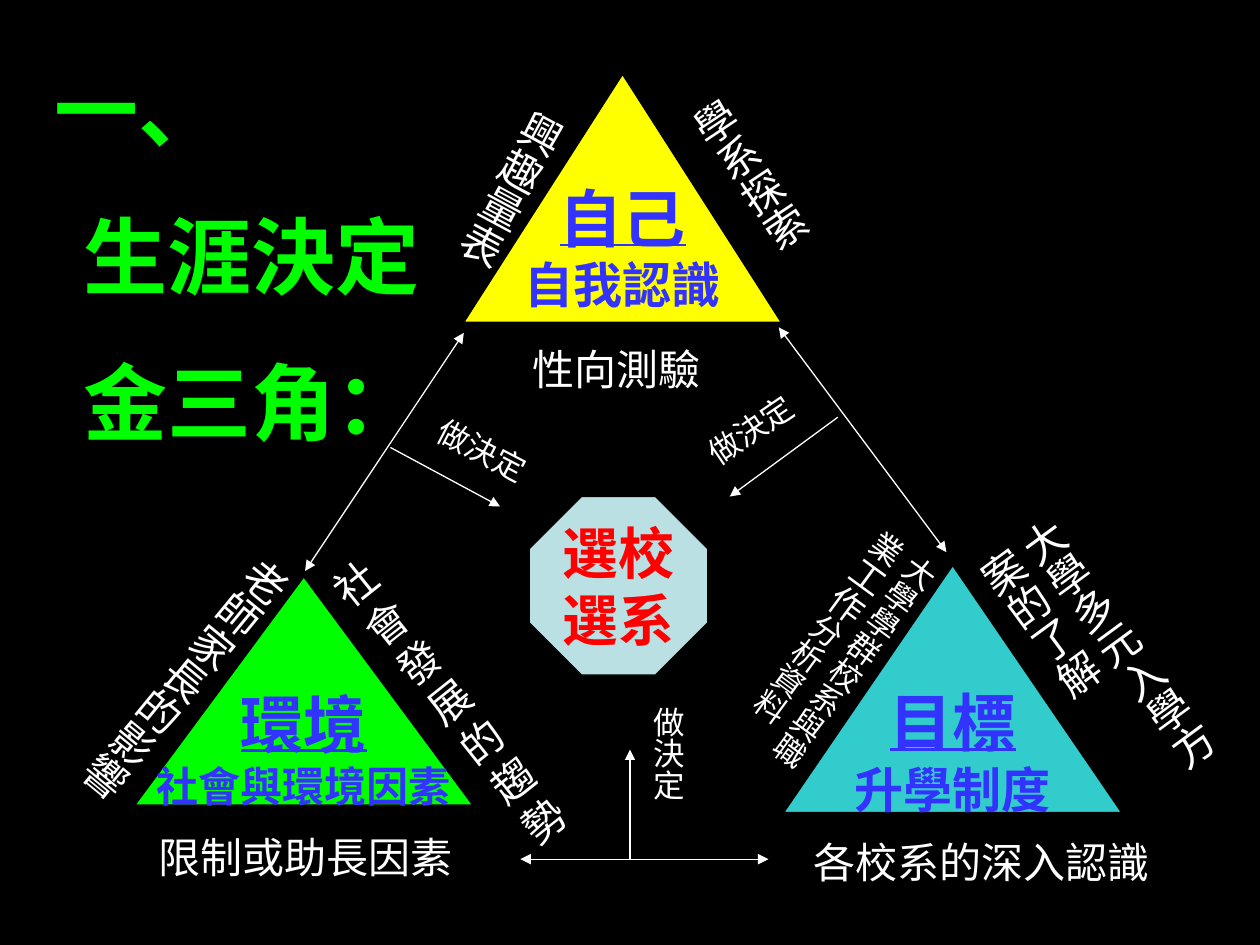
from dataclasses import dataclass

from lxml.etree import SubElement
from pptx import Presentation
from pptx.dml.color import RGBColor
from pptx.enum.shapes import MSO_CONNECTOR as Connector, MSO_SHAPE as Shape
from pptx.enum.text import MSO_ANCHOR as Anchor, MSO_AUTO_SIZE as AutoSize, PP_ALIGN as Align
from pptx.oxml.ns import qn
from pptx.util import Cm, Pt


@dataclass(frozen=True)
class Theme:
    background: str = "000000"
    label: str = "FFFFFF"
    title: str = "00FF00"
    topic: str = "3333FF"
    choice: str = "FF0000"
    octagon: str = "BBE0E3"
    yellow: str = "FFFF00"
    green: str = "00FF00"
    teal: str = "33CCCC"
    latin: str = "Arial"
    cjk: str = "Noto Sans CJK SC"
    heading: str = "DejaVu Sans"
    title_size: int = 48
    topic_size: int = 36
    choice_size: int = 32
    subtopic_size: int = 28
    label_size: int = 24
    note_size: int = 20
    small_size: int = 18
    line_width: float = 0.75


THEME = Theme()


def rgb(value):
    return RGBColor.from_string(value)


def write(frame, text, *, size=THEME.label_size, color=THEME.label, font=THEME.latin,
          bold=False, underline=False, align=None, before=0, same_line=False):
    """Add text as a new paragraph, or as a run that continues the last one."""
    paragraph = frame.paragraphs[-1]
    if paragraph.runs and not same_line:
        paragraph = frame.add_paragraph()
    if align is not None:
        paragraph.alignment = align
    if before:
        paragraph.space_before = Pt(before)
    run = paragraph.add_run()
    run.text = text
    run.font.size = Pt(size)
    run.font.name = font
    run.font.bold = bold
    run.font.underline = underline
    run.font.color.rgb = rgb(color)
    east_asian = SubElement(run.font.fill._xPr, qn("a:ea"))
    east_asian.set("typeface", THEME.heading)


def add_frame(slide, box, rotation=0, vertical=False):
    holder = slide.shapes.add_textbox(*map(Cm, box))
    holder.rotation = rotation
    frame = holder.text_frame
    frame.word_wrap = True
    frame.auto_size = AutoSize.SHAPE_TO_FIT_TEXT
    if vertical:
        holder.element.find(".//" + qn("a:bodyPr")).set("vert", "eaVert")
    return frame


def add_figure(slide, preset, box, color):
    figure = slide.shapes.add_shape(preset, *map(Cm, box))
    figure.shadow.inherit = False
    figure.fill.solid()
    figure.fill.fore_color.rgb = rgb(color)
    figure.line.color.rgb = rgb(THEME.background)
    figure.line.width = Pt(THEME.line_width)
    frame = figure.text_frame
    frame.word_wrap = False
    frame.vertical_anchor = Anchor.MIDDLE
    return frame


def add_arrow(slide, start, end, both=False):
    arrow = slide.shapes.add_connector(Connector.STRAIGHT, *map(Cm, start + end))
    arrow.line.color.rgb = rgb(THEME.label)
    arrow.line.width = Pt(THEME.line_width)
    outline = arrow.line._get_or_add_ln()
    for tag in ("a:headEnd", "a:tailEnd") if both else ("a:tailEnd",):
        SubElement(outline, qn(tag)).set("type", "triangle")
    SubElement(arrow.element.spPr, qn("a:effectLst"))


def add_title(slide, box):
    frame = add_frame(slide, box)
    look = dict(size=THEME.title_size, color=THEME.title, font=THEME.heading, bold=True)
    write(frame, "一、", **look)
    for line in ("生涯決定", "金三角："):
        write(frame, line, align=Align.CENTER, before=26, **look)


def add_corner(slide, box, color, topic, subtopic, labels, font=THEME.latin,
               subtopic_size=THEME.subtopic_size, lift=0):
    """Triangle with its labels; label boxes are offsets from the triangle's corner."""
    left, top = box[:2]
    frame = add_figure(slide, Shape.ISOSCELES_TRIANGLE, box, color)
    frame.margin_bottom += Cm(lift)
    look = dict(color=THEME.topic, bold=True, align=Align.CENTER)
    write(frame, topic, size=THEME.topic_size, font=font, underline=True, **look)
    write(frame, subtopic, size=subtopic_size, font=THEME.cjk, **look)
    for (dx, dy, width, height), rotation, vertical, align, runs in labels:
        label = add_frame(slide, (left + dx, top + dy, width, height), rotation, vertical)
        for text, size in runs:
            write(label, text, size=size, align=align, same_line=True)


def add_choice(slide, box):
    frame = add_figure(slide, Shape.OCTAGON, box, THEME.octagon)
    for line in ("選校", "選系"):
        write(frame, line, size=THEME.choice_size, color=THEME.choice, bold=True,
              align=Align.CENTER)


def add_decision(slide, side, branch, box, rotation=0, vertical=False):
    """Two-way arrow between corners, with a branch towards the choice."""
    add_arrow(slide, *side, both=True)
    add_arrow(slide, *branch)
    write(add_frame(slide, box, rotation, vertical), "做決定", size=THEME.small_size)


def label(text, box, rotation=0, vertical=False, align=None):
    return box, rotation, vertical, align, [(text, THEME.label_size)]


def main():
    deck = Presentation()
    deck.slide_width, deck.slide_height = Cm(25.4), Cm(19.05)
    slide = deck.slides.add_slide(deck.slide_layouts[6])
    slide.background.fill.solid()
    slide.background.fill.fore_color.rgb = rgb(THEME.background)

    # Self corner
    add_corner(slide, (9.35, 1.5, 6.4, 5), THEME.yellow, "自己", "自我認識", [
        label("性向測驗", (1.14, 5.31, 4.19, 1.27)),
        label("興趣量表", (-0.03, 0.28, 1.55, 4.19), 28.2, True),
        label("學系探索", (5.23, 0.07, 1.55, 5.18), 326.4, True),
    ], font=THEME.cjk, lift=0.56)

    # Environment corner
    add_corner(slide, (2.72, 11.63, 6.81, 4.6), THEME.green, "環境", "社會與環境因素", [
        label("限制或助長因素", (0.23, 5.01, 6.6, 1.27)),
        label("老師家長的影響", (-0.21, -1.37, 1.55, 7.47), 39.4, True),
        label("社會發展的趨勢", (5.69, -1.19, 1.4, 7.44), 321.5),
    ], subtopic_size=THEME.label_size)

    # Goal corner
    career_runs = [("大學學群校系與職業", THEME.small_size), ("工作", THEME.note_size),
                   ("分析資料", THEME.small_size)]
    add_corner(slide, (15.8, 11.4, 6.81, 4.98), THEME.teal, "目標", "升學制度", [
        label("各校系的深入認識", (-0.31, 5.34, 8.61, 1.27), align=Align.CENTER),
        label("大學多元入學方案的了解", (4.98, -1.24, 2.57, 6.6), 323.7, True),
        ((-0.28, -1.24, 2.13, 6.2), 36.2, True, None, career_runs),
    ])

    # Choice in the middle and the decisions leading to it
    add_choice(slide, (10.67, 10.01, 3.6, 3.6))
    add_decision(slide, ((9.35, 6.71), (6.15, 11.51)), ((7.87, 9.02), (10.08, 10.21)),
                 (8.51, 8.61, 2.59, 1.02), 27.5)
    add_decision(slide, ((15.7, 6.6), (19.08, 11.13)), ((16.89, 8.41), (14.71, 10.01)),
                 (13.92, 8.1, 2.59, 1.02), 325.8)
    add_decision(slide, ((10.49, 17.32), (15.49, 17.32)), ((12.7, 17.32), (12.7, 15.11)),
                 (12.7, 14, 1.27, 2.92), vertical=True)

    add_title(slide, (0.84, 1.04, 8.46, 8.46))
    deck.save("out.pptx")


if __name__ == "__main__":
    main()
